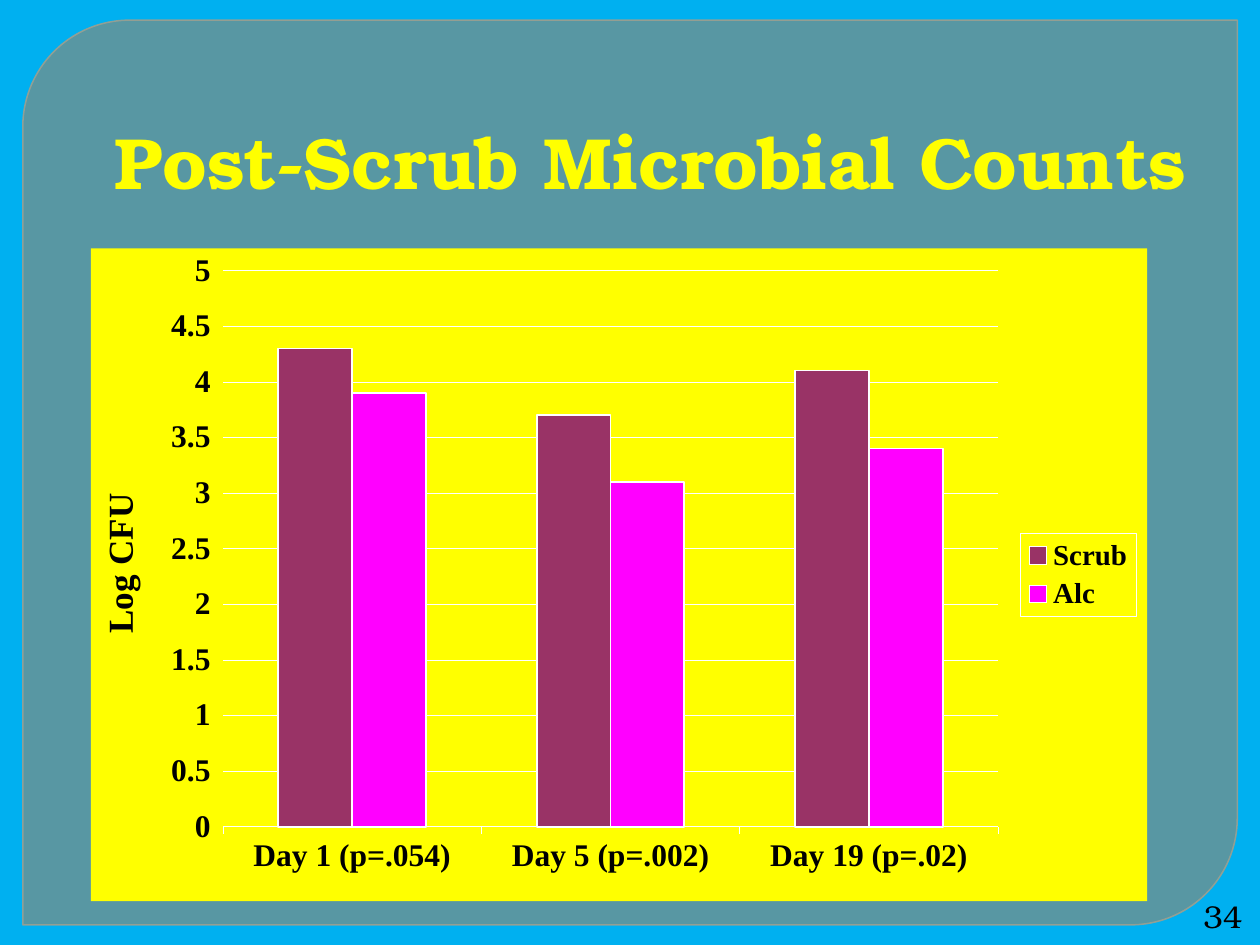
from lxml import etree
from pptx import Presentation
from pptx.chart.data import CategoryChartData
from pptx.dml.color import RGBColor
from pptx.enum import chart as ch, shapes, text
from pptx.oxml import parse_xml
from pptx.oxml.ns import nsdecls, qn
from pptx.util import Pt

SERIF = "TeX Gyre Bonum"
ROMAN = "Times New Roman"


def color(value):
    return RGBColor.from_string(value)


def set_fill(fmt, value, alpha=None):
    fmt.solid()
    fmt.fore_color.rgb = color(value)
    if alpha is not None:
        clr = fmt._xPr.find(".//" + qn("a:srgbClr"))
        etree.SubElement(clr, qn("a:alpha")).set("val", str(alpha * 1000))


def set_line(line, value, width, alpha=None):
    line.width = Pt(width)
    set_fill(line.fill, value, alpha)


def set_font(font, name, size, value, bold=False):
    font.name = name
    font.size = Pt(size)
    font.bold = bold
    font.color.rgb = color(value)


def write(tf, content, name=SERIF, size=18, value="000000", bold=False,
          align=text.PP_ALIGN.LEFT, anchor=text.MSO_ANCHOR.MIDDLE):
    tf.word_wrap = True
    tf.auto_size = text.MSO_AUTO_SIZE.NONE
    tf.vertical_anchor = anchor
    p = tf.paragraphs[0]
    p.alignment = align
    r = p.add_run()
    r.text = content
    set_font(r.font, name, size, value, bold)
    return p


def place(sp, left, top, width, height):
    sp.left, sp.top, sp.width, sp.height = map(Pt, (left, top, width, height))


def add_panel(slide):
    sp = slide.shapes.add_shape(shapes.MSO_SHAPE.ROUND_2_DIAG_RECTANGLE,
                                Pt(13), Pt(11.5), Pt(694), Pt(517))
    sp.adjustments[0] = 0.118
    sp.adjustments[1] = 0
    sp.shadow.inherit = False
    set_fill(sp.fill, "888B7B", 65)
    set_line(sp.line, "9DA090", 0.87, 88)
    tree = slide.shapes._spTree
    tree.remove(sp._element)
    tree.insert(2, sp._element)


def add_title(slide, content):
    sp = slide.shapes.title
    place(sp, 54, 48.2, 656.6, 72)
    p = write(sp.text_frame, content, size=41.4, value="FFFF00", bold=True,
              anchor=text.MSO_ANCHOR.BOTTOM)
    p._p.get_or_add_pPr().set("marL", str(Pt(4.3)))


def add_page_number(slide, number):
    sp = slide.shapes.add_textbox(Pt(680.4), Pt(512.6), Pt(36.7), Pt(21.6))
    write(sp.text_frame, number, align=text.PP_ALIGN.RIGHT)


def area_xml(body):
    return parse_xml(f'<c:spPr {nsdecls("c", "a")}>{body}</c:spPr>')


def solid_xml(value):
    return f'<a:solidFill><a:srgbClr val="{value}"/></a:solidFill>'


def set_plot_layout(chart, x, y, w, h):
    area = chart._chartSpace.chart.plotArea
    for old in area.findall(qn("c:layout")):
        area.remove(old)
    parts = [("layoutTarget", "inner"), ("xMode", "edge"), ("yMode", "edge"),
             ("x", x), ("y", y), ("w", w), ("h", h)]
    body = "".join(f'<c:{tag} val="{val}"/>' for tag, val in parts)
    area.insert(0, parse_xml(f'<c:layout {nsdecls("c")}><c:manualLayout>'
                             f'{body}</c:manualLayout></c:layout>'))


def format_axes(chart):
    cat, val = chart.category_axis, chart.value_axis
    for axis in (cat, val):
        axis.major_tick_mark = ch.XL_TICK_MARK.OUTSIDE
        axis.minor_tick_mark = ch.XL_TICK_MARK.NONE
        set_font(axis.tick_labels.font, ROMAN, 18, "000000", True)
    cat.tick_label_position = ch.XL_TICK_LABEL_POSITION.LOW
    set_line(cat.format.line, "FFFFFF", 0.25)
    val.minimum_scale, val.maximum_scale, val.major_unit = 0, 5, 0.5
    val.tick_labels.number_format = "General"
    val.tick_labels.number_format_is_linked = False
    val.format.line.fill.background()
    set_line(val.major_gridlines.format.line, "FFFFFF", 0.25)
    p = val.axis_title.text_frame.paragraphs[0]
    r = p.add_run()
    r.text = "Log CFU"
    set_font(r.font, ROMAN, 20, "000000", True)


def format_legend(chart):
    chart.has_legend = True
    legend = chart.legend
    legend.position = ch.XL_LEGEND_POSITION.RIGHT
    legend.include_in_layout = False
    set_font(legend.font, ROMAN, 16.5, "000000", True)
    border = area_xml(f'<a:ln w="{Pt(0.25)}">{solid_xml("FFFFFF")}</a:ln>')
    legend._element.find(qn("c:overlay")).addnext(border)


def add_column_chart(slide, categories, series):
    data = CategoryChartData()
    data.categories = categories
    for name, values, _ in series:
        data.add_series(name, values)
    chart = slide.shapes.add_chart(ch.XL_CHART_TYPE.COLUMN_CLUSTERED, Pt(52),
                                   Pt(142), Pt(603.5), Pt(373), data).chart
    chart.has_title = False
    set_font(chart.font, ROMAN, 18, "FFFFFF", True)
    background = area_xml(solid_xml("FFFF00") + "<a:ln><a:noFill/></a:ln>")
    chart._chartSpace.chart.addnext(background)
    plot = chart.plots[0]
    plot.gap_width = 150
    plot.overlap = 0
    plot.vary_by_categories = False
    for bars, (_, _, value) in zip(plot.series, series):
        set_fill(bars.format.fill, value)
        set_line(bars.format.line, "FFFFFF", 1)
    format_axes(chart)
    format_legend(chart)
    set_plot_layout(chart, 0.125, 0.034, 0.734, 0.852)


def main():
    prs = Presentation()
    prs.slide_width, prs.slide_height = Pt(720), Pt(540)
    slide = prs.slides.add_slide(prs.slide_layouts[5])
    set_fill(slide.background.fill, "00B0F0")
    add_panel(slide)
    add_title(slide, "Post-Scrub Microbial Counts")
    add_column_chart(slide,
                     ["Day 1 (p=.054)", "Day 5 (p=.002)", "Day 19 (p=.02)"],
                     [("Scrub", (4.3, 3.7, 4.1), "993366"),
                      ("Alc", (3.9, 3.1, 3.4), "FF00FF")])
    add_page_number(slide, "34")
    prs.save("out.pptx")


if __name__ == "__main__":
    main()
